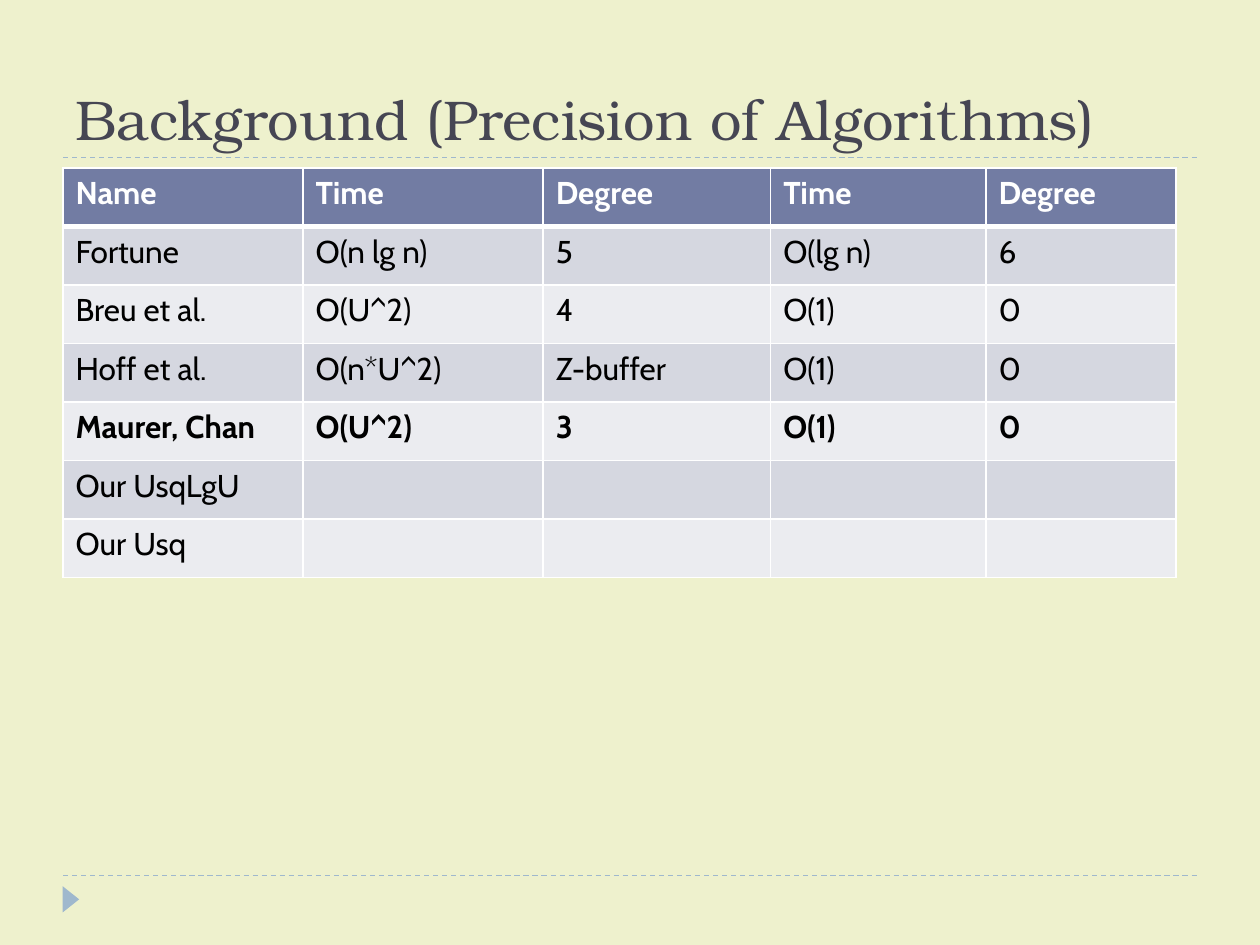
"""Builds the slide with the table on the precision of algorithms."""
from lxml import etree
from pptx import Presentation
from pptx import util as u
from pptx.dml.color import RGBColor
from pptx.enum import dml, shapes, text
from pptx.oxml import ns

Pt = u.Pt
COLORS = {
    "background": "EEF1CD", "accent": "9FB8CD", "title": "464653",
    "header": "727CA3", "odd": "D5D7E0", "even": "EBECF0",
    "border": "FFFFFF", "header_text": "FFFFFF", "body_text": "000000",
}
ROWS = [
    ["Name", "Time", "Degree", "Time", "Degree"],
    ["Fortune", "O(n lg n)", "5", "O(lg n)", "6"],
    ["Breu et al.", "O(U^2)", "4", "O(1)", "0"],
    ["Hoff et al.", "O(n*U^2)", "Z-buffer", "O(1)", "0"],
    ["Maurer, Chan", "O(U^2)", "3", "O(1)", "0"],
    ["Our UsqLgU", "", "", "", ""],
    ["Our Usq", "", "", "", ""],
]
COLUMN_WIDTHS = [137.2, 137.2, 130, 123, 108.6]
ROW_HEIGHT = 33.43
BOLD_ROWS = (0, 4)


def add_run(paragraph, words, font, size, color, bold=False):
    run = paragraph.add_run()
    run.text = words
    run.font.name = font
    run.font.size = Pt(size)
    run.font.bold = bold
    run.font.color.rgb = RGBColor.from_string(COLORS[color])


def set_borders(cell, widths):
    properties = cell._tc.get_or_add_tcPr()
    for position, (side, width) in enumerate(widths.items()):
        border = etree.Element(ns.qn(f"a:ln{side}"), w=str(Pt(width)))
        fill = etree.SubElement(border, ns.qn("a:solidFill"))
        etree.SubElement(fill, ns.qn("a:srgbClr"), val=COLORS["border"])
        properties.insert(position, border)


deck = Presentation()
deck.slide_width, deck.slide_height = Pt(720), Pt(540)
slide = deck.slides.add_slide(deck.slide_layouts[6])
slide.background.fill.solid()
slide.background.fill.fore_color.rgb = RGBColor.from_string(COLORS["background"])

for rule_y in (500.4, 90):
    rule = slide.shapes.add_connector(
        shapes.MSO_CONNECTOR.STRAIGHT, Pt(36), Pt(rule_y), Pt(684), Pt(rule_y))
    rule.line.color.rgb = RGBColor.from_string(COLORS["accent"])
    rule.line.width = Pt(0.75)
    rule.line.dash_style = dml.MSO_LINE.DASH
    etree.SubElement(rule._element.spPr, ns.qn("a:effectLst"))

marker = slide.shapes.add_shape(
    shapes.MSO_SHAPE.ISOSCELES_TRIANGLE, Pt(33), Pt(509.2), Pt(15), Pt(9.4))
marker.rotation = 90
marker.shadow.inherit = False
marker.fill.solid()
marker.fill.fore_color.rgb = RGBColor.from_string(COLORS["accent"])
marker.line.fill.background()

title = slide.shapes.add_textbox(Pt(36), Pt(12), Pt(648), Pt(78)).text_frame
title.word_wrap = True
title.vertical_anchor = text.MSO_ANCHOR.BOTTOM
add_run(title.paragraphs[0], "Background (Precision of Algorithms)",
        "TeX Gyre Bonum", 32, "title")

algorithms = slide.shapes.add_table(
    len(ROWS), len(COLUMN_WIDTHS), Pt(36), Pt(96),
    Pt(sum(COLUMN_WIDTHS)), Pt(ROW_HEIGHT * len(ROWS))).table
for column, width in zip(algorithms.columns, COLUMN_WIDTHS):
    column.width = Pt(width)

for r, values in enumerate(ROWS):
    algorithms.rows[r].height = Pt(ROW_HEIGHT)
    band = "header" if r == 0 else "odd" if r % 2 else "even"
    ink = "header_text" if r == 0 else "body_text"
    edges = {"L": 1, "R": 1, "T": 3 if r == 1 else 1, "B": 3 if r == 0 else 1}
    for c, value in enumerate(values):
        cell = algorithms.cell(r, c)
        cell.fill.solid()
        cell.fill.fore_color.rgb = RGBColor.from_string(COLORS[band])
        set_borders(cell, edges)
        if value:
            add_run(cell.text_frame.paragraphs[0], value, "Cabin", 18, ink,
                    r in BOLD_ROWS)

deck.save("out.pptx")
